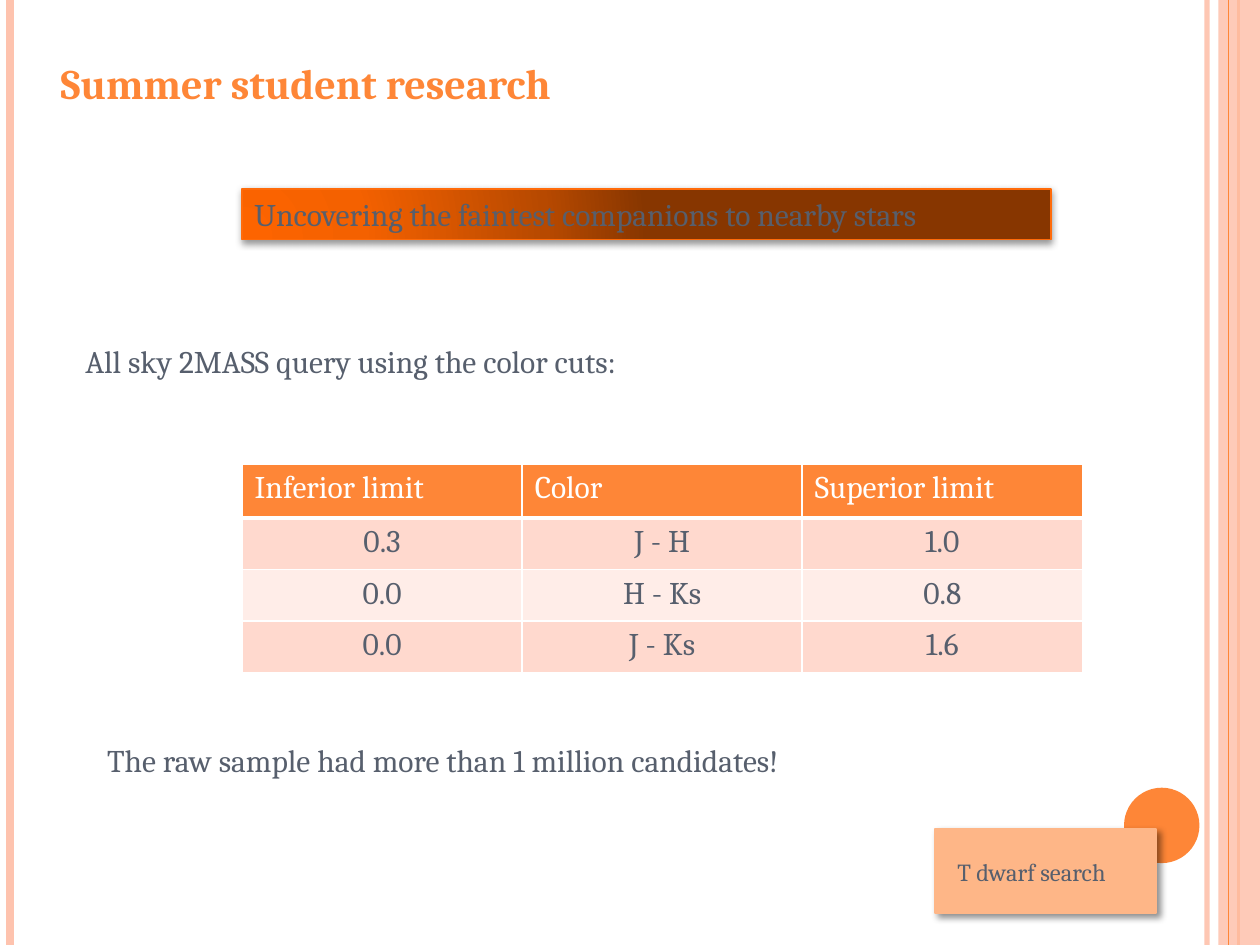
"""Build the "Summer student research" slide with its colour-cut table."""
from dataclasses import dataclass

import lxml.etree
import pptx
import pptx.dml.color
import pptx.enum.shapes
import pptx.enum.text
import pptx.oxml.ns
import pptx.util

Cm = pptx.util.Cm
Pt = pptx.util.Pt
RGBColor = pptx.dml.color.RGBColor
Shapes = pptx.enum.shapes.MSO_SHAPE
Align = pptx.enum.text.PP_ALIGN

ORANGE = RGBColor(0xFE, 0x86, 0x37)
PEACH = RGBColor(0xFE, 0xC3, 0xAE)
APRICOT = RGBColor(0xFE, 0xB6, 0x87)
BANNER_EDGE = RGBColor(0xFF, 0x6B, 0x0A)
SLATE = RGBColor(0x57, 0x5F, 0x6D)
WHITE = RGBColor(0xFF, 0xFF, 0xFF)
BLACK = RGBColor(0, 0, 0)
BANDS = (RGBColor(0xFF, 0xD9, 0xCE), RGBColor(0xFF, 0xED, 0xE8))
BANNER_STOPS = (
    (0, RGBColor(0xFD, 0x64, 0x00)),
    (30, RGBColor(0xF4, 0x61, 0x00)),
    (75, RGBColor(0xB7, 0x49, 0x00)),
    (100, RGBColor(0x87, 0x36, 0x00)),
)
FONT = "Cambria"
PAGE_WIDTH, PAGE_HEIGHT = 25.4, 19.05
ROWS = (
    ("Inferior limit", "Color", "Superior limit"),
    ("0.3", "J - H", "1.0"),
    ("0.0", "H - Ks", "0.8"),
    ("0.0", "J - Ks", "1.6"),
)


@dataclass(frozen=True)
class Frame:
    left: float
    top: float
    width: float
    height: float

    def lengths(self) -> tuple:
        return Cm(self.left), Cm(self.top), Cm(self.width), Cm(self.height)


@dataclass(frozen=True)
class Stripe:
    x: float
    color: RGBColor
    points: float
    opacity: int = 100


@dataclass(frozen=True)
class Caption:
    text: str
    frame: Frame
    size: int = 18


STRIPES = (
    Stripe(24.33, PEACH, 3, 93),
    Stripe(0.21, PEACH, 4.5),
    Stripe(24.97, ORANGE, 1.5),
)
INNER_STRIPE = Stripe(24.77, ORANGE, 0.75)
CAPTIONS = (
    Caption("T dwarf search", Frame(19.05, 17.15, 4.45, 0.86), 14),
    Caption("All sky 2MASS query using the color cuts:", Frame(1.47, 6.78, 14.61, 2.57)),
    Caption("The raw sample had more than 1 million candidates!", Frame(1.91, 14.81, 20.75, 1.02)),
)


def add_node(parent, tag: str, **attributes):
    values = {name: str(value) for name, value in attributes.items()}
    return lxml.etree.SubElement(parent, pptx.oxml.ns.qn(tag), values)


def add_color(parent, color: RGBColor, opacity: int = 100) -> None:
    node = add_node(parent, "a:srgbClr", val=color)
    if opacity < 100:
        add_node(node, "a:alpha", val=opacity * 1000)


def set_opacity(properties, opacity: int) -> None:
    if opacity < 100:
        color = next(properties.iter(pptx.oxml.ns.qn("a:srgbClr")))
        add_node(color, "a:alpha", val=opacity * 1000)


def add_stripe(page, stripe: Stripe) -> None:
    x = Cm(stripe.x)
    line = page.shapes.add_connector(
        pptx.enum.shapes.MSO_CONNECTOR.STRAIGHT, x, 0, x, Cm(PAGE_HEIGHT))
    line.line.color.rgb = stripe.color
    line.line.width = Pt(stripe.points)
    properties = line._element.spPr
    set_opacity(properties, stripe.opacity)
    add_node(properties, "a:effectLst")


def add_block(page, kind, frame: Frame, fill: RGBColor, edge: RGBColor | None = None, opacity: int = 100):
    block = page.shapes.add_shape(kind, *frame.lengths())
    block.shadow.inherit = False
    block.fill.solid()
    block.fill.fore_color.rgb = fill
    set_opacity(block._element.spPr, opacity)
    if edge is None:
        block.line.fill.background()
    else:
        block.line.color.rgb = edge
        block.line.width = Pt(1)
    return block


def add_shadow(block, opacity: int, distance: float, angle: int) -> None:
    effects = block._element.spPr.find(pptx.oxml.ns.qn("a:effectLst"))
    shadow = add_node(effects, "a:outerShdw", blurRad=Pt(4), dist=Pt(distance),
                      dir=angle * 60000, algn="tl", rotWithShape=0)
    add_color(shadow, BLACK, opacity)


def set_radial_fill(block) -> None:
    block.fill.gradient()
    gradient = block._element.spPr.find(pptx.oxml.ns.qn("a:gradFill"))
    for child in list(gradient):
        gradient.remove(child)
    stops = add_node(gradient, "a:gsLst")
    for position, color in BANNER_STOPS:
        add_color(add_node(stops, "a:gs", pos=position * 1000), color)
    circle = add_node(gradient, "a:path", path="circle")
    add_node(circle, "a:fillToRect", l=5000, t=100000, r=120000, b=10000)


def write(frame, text: str, size: int, color: RGBColor, bold: bool = False, align=Align.LEFT) -> None:
    frame.text = text
    para = frame.paragraphs[0]
    para.alignment = align
    para.font.name = FONT
    para.font.size = Pt(size)
    para.font.bold = bold
    para.font.color.rgb = color


def write_box(box, text: str, size: int, color: RGBColor, bold: bool = False) -> None:
    box.text_frame.word_wrap = True
    box.text_frame.auto_size = pptx.enum.text.MSO_AUTO_SIZE.NONE
    box.text_frame.vertical_anchor = pptx.enum.text.MSO_ANCHOR.TOP
    write(box.text_frame, text, size, color, bold)


def set_borders(cell, widths: dict[str, int]) -> None:
    properties = cell._tc.get_or_add_tcPr()
    for side, points in widths.items():
        border = add_node(properties, f"a:ln{side}", w=Pt(points))
        add_color(add_node(border, "a:solidFill"), WHITE)


def add_limits_table(page) -> None:
    frame = Frame(4.88, 9.35, 16.94, 4.21)
    table = page.shapes.add_table(len(ROWS), len(ROWS[0]), *frame.lengths()).table
    for column in table.columns:
        column.width = Cm(frame.width / len(ROWS[0]))
    for index, values in enumerate(ROWS):
        header = index == 0
        table.rows[index].height = Cm(1.09 if header else 1.04)
        widths = {"L": 1, "R": 1, "T": 3 if index == 1 else 1, "B": 3 if header else 1}
        for cell, value in zip(table.rows[index].cells, values):
            set_borders(cell, widths)
            cell.fill.solid()
            cell.fill.fore_color.rgb = ORANGE if header else BANDS[(index - 1) % 2]
            write(cell.text_frame, value, 18, WHITE if header else SLATE,
                  align=Align.LEFT if header else Align.CENTER)


def main() -> None:
    deck = pptx.Presentation()
    deck.slide_width, deck.slide_height = Cm(PAGE_WIDTH), Cm(PAGE_HEIGHT)
    page = deck.slides.add_slide(deck.slide_layouts.get_by_name("Title Only"))
    title = page.shapes.title
    title.left, title.top, title.width, title.height = Frame(0.97, 1.04, 18.52, 1.27).lengths()
    write_box(title, "Summer student research", 24, ORANGE, bold=True)

    for stripe in STRIPES:
        add_stripe(page, stripe)
    add_block(page, Shapes.RECTANGLE, Frame(24.56, 0, 0.84, PAGE_HEIGHT), PEACH, opacity=87)
    add_stripe(page, INNER_STRIPE)
    add_block(page, Shapes.OVAL, Frame(22.66, 15.88, 1.52, 1.52), ORANGE)

    card = add_block(page, Shapes.RECTANGLE, Frame(18.85, 16.71, 4.45, 1.7), APRICOT, APRICOT)
    add_shadow(card, 43, 3, 45)
    banner = add_block(page, Shapes.RECTANGLE, Frame(4.88, 3.81, 16.31, 1.02), ORANGE, BANNER_EDGE)
    set_radial_fill(banner)
    add_shadow(banner, 42, 1.6, 90)
    write_box(banner, "Uncovering the faintest companions to nearby stars", 18, SLATE)

    for caption in CAPTIONS:
        box = page.shapes.add_textbox(*caption.frame.lengths())
        write_box(box, caption.text, caption.size, SLATE)
    add_limits_table(page)
    deck.save("out.pptx")


if __name__ == "__main__":
    main()
